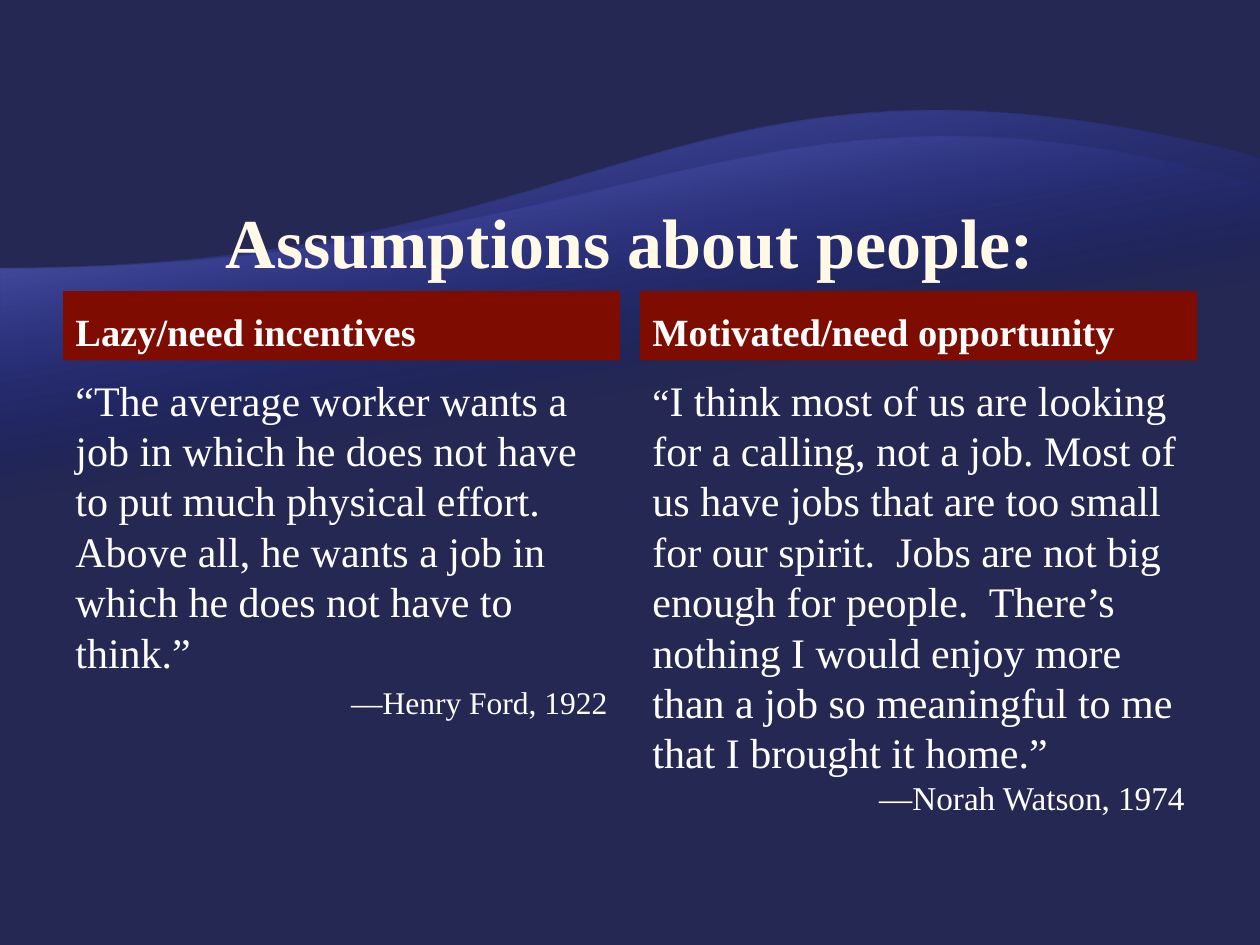
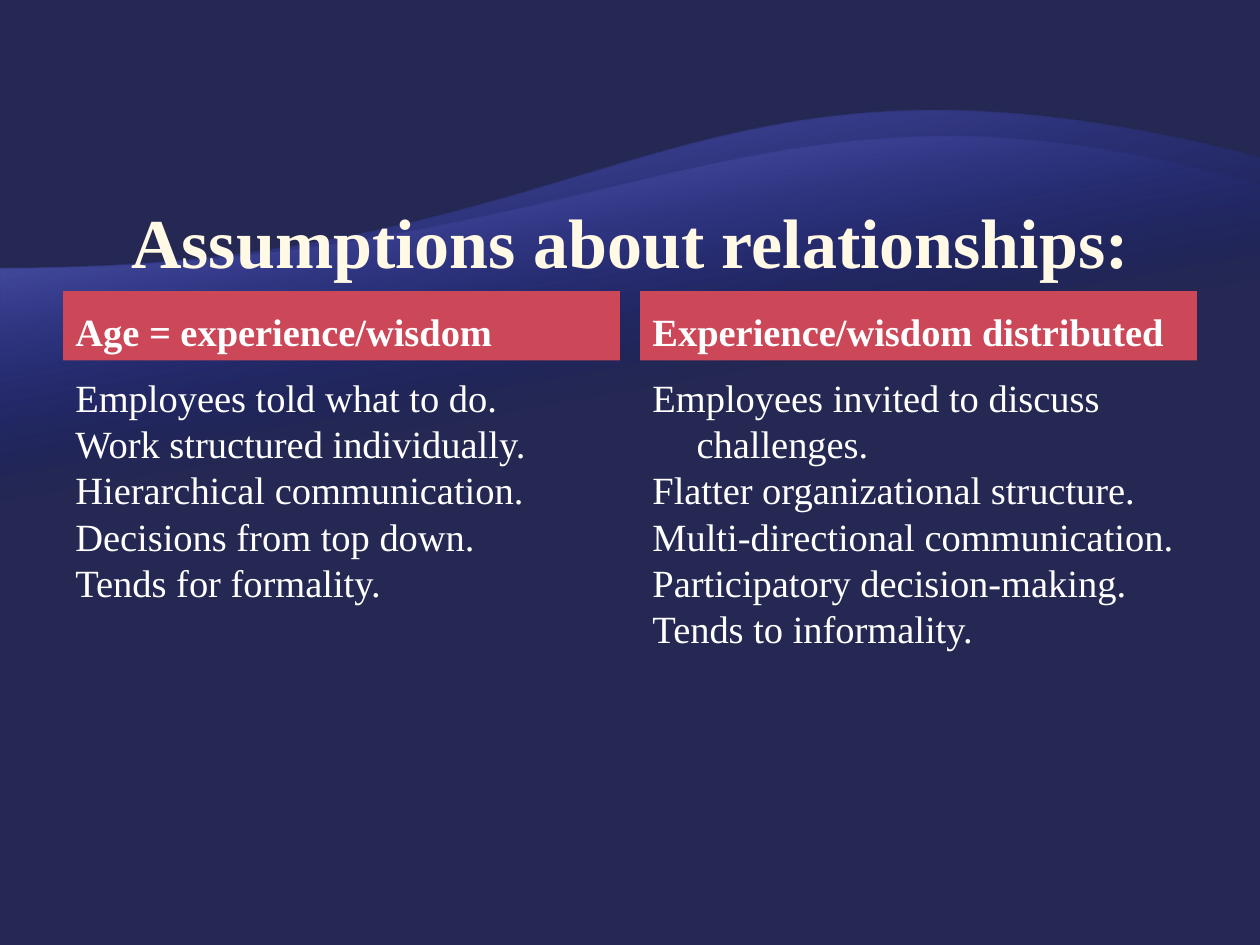
import pptx
import pptx.dml.color
import pptx.enum.shapes
import pptx.enum.text
import pptx.oxml.ns
import pptx.util
from lxml import etree

RGBColor = pptx.dml.color.RGBColor
Inches, Pt, qn = pptx.util.Inches, pptx.util.Pt, pptx.oxml.ns.qn
PP_ALIGN, MSO_ANCHOR = pptx.enum.text.PP_ALIGN, pptx.enum.text.MSO_ANCHOR

NAVY = RGBColor(0x24, 0x28, 0x52)
DEEP_BLUE = RGBColor(0x00, 0x0D, 0x9E)
PERIWINKLE = RGBColor(0x79, 0x7F, 0xFF)
LAVENDER = RGBColor(0xA3, 0xA7, 0xFF)
CREAM = RGBColor(0xFF, 0xF9, 0xE5)
WHITE = RGBColor(0xFF, 0xFF, 0xFF)
MAROON = RGBColor(0x7E, 0x0C, 0x00)
ROSE = RGBColor(0xCC, 0x47, 0x57)

FONT = "Times New Roman"
WIDTH, HEIGHT = 10, 7.5
MARGIN, GUTTER = 0.5, 0.16
COLUMN = (WIDTH - 2 * MARGIN - GUTTER) / 2
TITLE_BOX = (MARGIN, 1, WIDTH - 2 * MARGIN, 1.25)
BAND_TOP, BAND_HEIGHT = 2.31, 0.55
BODY_TOP, BODY_HEIGHT = 2.92, 4
HANG = 0.35

WAVES = [
    (1.25, 7.33, (5.34, 0.05), PERIWINKLE, 55),
    (1.47, 6.37, (5.98, 0.31), LAVENDER, 30),
]
WAVE_LEFT_Y = 2.13


def place(sp, left, top, width, height):
    """Move and size a shape, in inches."""
    sp.left, sp.top = Inches(left), Inches(top)
    sp.width, sp.height = Inches(width), Inches(height)


def style(p, size, color=WHITE, bold=False, align=PP_ALIGN.LEFT, hang=0, before=0):
    """Set a paragraph's font, alignment, hanging indent and space before."""
    p.font.name, p.font.size, p.font.bold = FONT, Pt(size), bold
    p.font.color.rgb = color
    p.alignment = align
    p.space_before = Pt(before)
    pPr = p._p.get_or_add_pPr()
    pPr.set("marL", str(Inches(hang)))
    pPr.set("indent", str(-Inches(hang)))


def add_wave(s, top, bottom, crest, tint, opacity):
    """Draw one translucent wave that spans the slide and return it."""
    builder = s.shapes.build_freeform(Inches(WIDTH), Inches(bottom))
    corners = [(0, bottom), (0, WAVE_LEFT_Y), (WIDTH, top)]
    builder.add_line_segments([(Inches(x), Inches(y)) for x, y in corners])
    sp = builder.convert_to_shape()
    sp.shadow.inherit = False
    sp.line.fill.background()

    curve = list(sp.element.iter(qn("a:lnTo")))[2]
    curve.tag = qn("a:cubicBezTo")
    for i, (x, y) in enumerate([(WIDTH / 2, WAVE_LEFT_Y), crest]):
        pt = etree.Element(qn("a:pt"), x=str(Inches(x)), y=str(Inches(y - top)))
        curve.insert(i, pt)

    sp.fill.gradient()
    sp.fill.gradient_angle = 100
    stops = zip(sp.fill.gradient_stops, [(0.65, DEEP_BLUE), (1, tint)])
    for stop, (position, color) in stops:
        stop.position, stop.color.rgb = position, color
    for clr, alpha in zip(sp.element.iter(qn("a:srgbClr")), (0, opacity)):
        etree.SubElement(clr, qn("a:alpha"), val=str(alpha * 1000))
    return sp


def set_backdrop(layout, s):
    """Give the layout its navy ground and the waves, built on a slide of it."""
    layout.background.fill.solid()
    layout.background.fill.fore_color.rgb = NAVY
    for i, wave in enumerate(WAVES):
        sp = add_wave(s, *wave)
        sp.element.nvSpPr.cNvPr.id = 20 + i
        layout.shapes.element.insert(2 + i, sp.element)


def add_title(s, text):
    """Fill and format the title placeholder."""
    title = s.shapes.title
    place(title, *TITLE_BOX)
    tf = title.text_frame
    tf.text = text
    tf.vertical_anchor = MSO_ANCHOR.BOTTOM
    tf.margin_left = tf.margin_right = 0
    tf.margin_top = tf.margin_bottom = Inches(0.01)
    style(tf.paragraphs[0], 40, CREAM, True, PP_ALIGN.CENTER)


def add_band(s, left, text, color):
    """Add a column's heading on a coloured band."""
    sp = s.shapes.add_shape(pptx.enum.shapes.MSO_SHAPE.RECTANGLE, 0, 0, 0, 0)
    place(sp, left, BAND_TOP, COLUMN, BAND_HEIGHT)
    sp.shadow.inherit = False
    sp.fill.solid()
    sp.fill.fore_color.rgb = color
    sp.line.fill.background()
    tf = sp.text_frame
    tf.word_wrap = True
    tf.vertical_anchor = MSO_ANCHOR.BOTTOM
    tf.text = text
    style(tf.paragraphs[0], 22, bold=True, hang=HANG, before=4.4)


def add_body(s, left, paragraphs):
    """Add a column's text from pairs of text and paragraph style."""
    sp = s.shapes.add_textbox(0, 0, 0, 0)
    place(sp, left, BODY_TOP, COLUMN, BODY_HEIGHT)
    tf = sp.text_frame
    tf.word_wrap = True
    tf.text = "\n".join(text for text, _ in paragraphs)
    for p, (_, look) in zip(tf.paragraphs, paragraphs):
        style(p, **look)
    return tf


def add_comparison(s, title, color, columns):
    """Compose a title over two headed columns and return the column texts."""
    add_title(s, title)
    frames = []
    for i, (heading, paragraphs) in enumerate(columns):
        left = MARGIN + i * (COLUMN + GUTTER)
        add_band(s, left, heading, color)
        frames.append(add_body(s, left, paragraphs))
    return frames


def quote(text, source, size, before=0):
    """Return a quotation and its right-aligned source."""
    return [(text, dict(size=24)),
            (source, dict(size=size, align=PP_ALIGN.RIGHT, before=before))]


def points(*lines):
    """Return lines set with a hanging indent."""
    return [(line, dict(size=22, hang=HANG)) for line in lines]


def main():
    """Build the two slides and save them."""
    prs = pptx.Presentation()
    prs.slide_width, prs.slide_height = Inches(WIDTH), Inches(HEIGHT)
    layout = prs.slide_layouts[5]
    people, relationships = [prs.slides.add_slide(layout) for _ in range(2)]
    set_backdrop(layout, people)

    _, calling = add_comparison(people, "Assumptions about people:", MAROON, [
        ("Lazy/need incentives", quote(
            "“The average worker wants a job in which he does not have to put "
            "much physical effort.  Above all, he wants a job in which he does "
            "not have to think.”",
            "—Henry Ford, 1922", 18, before=3.6)),
        ("Motivated/need opportunity", quote(
            "“I think most of us are looking for a calling, not a job. Most of "
            "us have jobs that are too small for our spirit.  Jobs are not big "
            "enough for people.  There’s nothing I would enjoy more than a job "
            "so meaningful to me that I brought it home.”",
            "—Norah Watson, 1974", 19)),
    ])
    p = calling.paragraphs[0]
    opening, rest = p.runs[0], p.add_run()
    opening.text, rest.text = opening.text[0], opening.text[1:]
    opening.font.size = Pt(22)

    add_comparison(relationships, "Assumptions about relationships:", ROSE, [
        ("Age = experience/wisdom", points(
            "Employees told what to do.",
            "Work structured individually.",
            "Hierarchical communication.",
            "Decisions from top down.",
            "Tends for formality.")),
        ("Experience/wisdom distributed", points(
            "Employees invited to discuss challenges.",
            "Flatter organizational structure.",
            "Multi-directional communication.",
            "Participatory decision-making.",
            "Tends to informality.")),
    ])
    prs.save("out.pptx")


if __name__ == "__main__":
    main()
